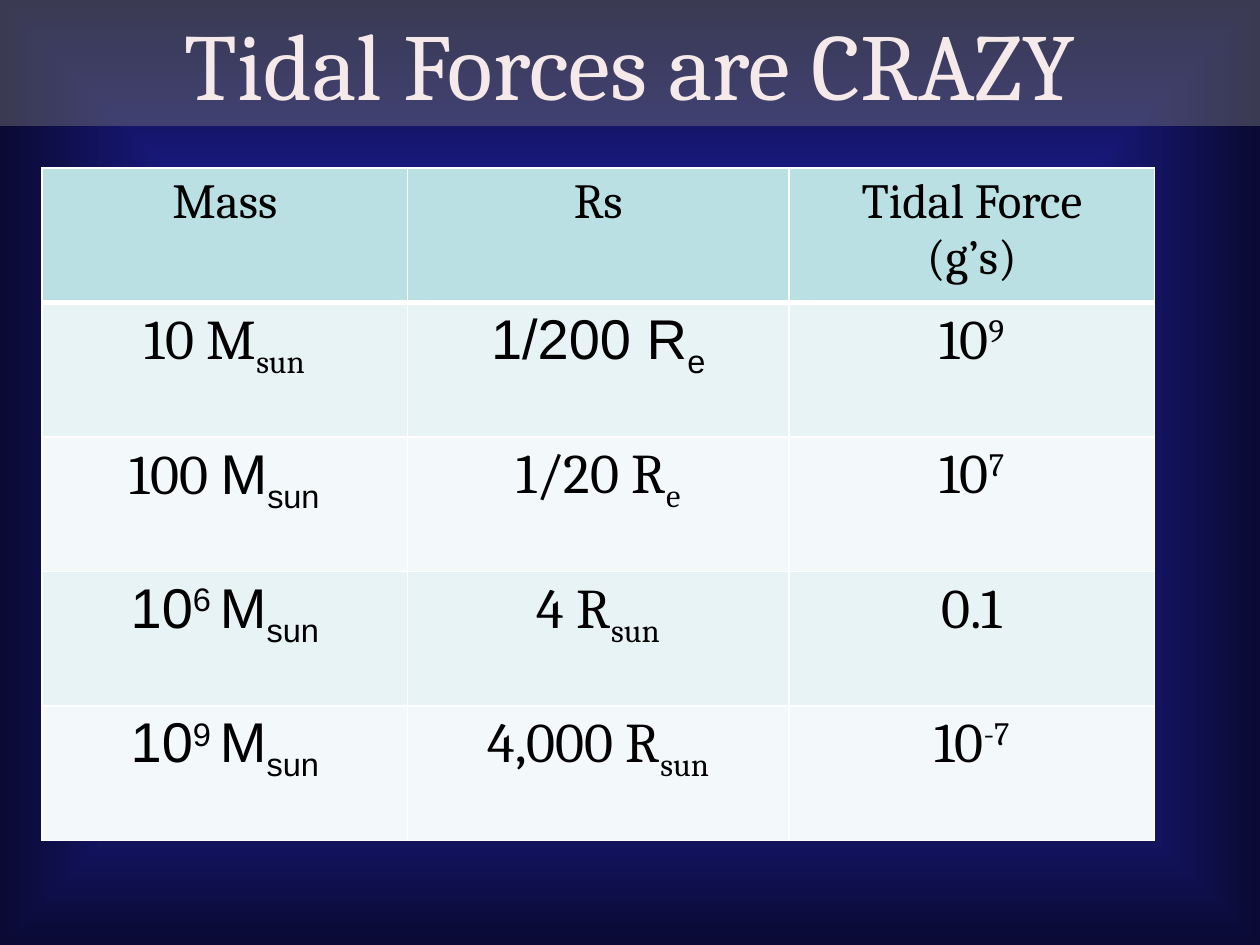
from lxml.etree import SubElement as Sub
from pptx import Presentation
from pptx.dml.color import RGBColor
from pptx.enum.shapes import MSO_SHAPE as Shape
from pptx.enum.text import MSO_ANCHOR as Anchor, PP_ALIGN as Align
from pptx.oxml.ns import qn
from pptx.util import Cm, Pt

SERIF, SANS = "Cambria", "Arial"
SUB, SUP = -25, 30
HEADER, BANDS = "BBE0E3", ("E7F3F4", "F3F9FA")
COLUMNS = (7.36, 7.7, 7.36)


def rgb(color):
    return RGBColor.from_string(color)


def add_text(p, text, font=SERIF, size=32, color="000000", base=0):
    r = p.add_run()
    r.text = text
    r.font.name, r.font.size = font, Pt(size)
    r.font.color.rgb = rgb(color)
    if base:
        r._r.get_or_add_rPr().set("baseline", str(base * 1000))
    p.alignment = Align.CENTER


def unit(symbol, index, font=SERIF):
    return [(symbol, font, 0), (index, font, SUB)]


def power(exponent, font=SERIF):
    return [("10", font, 0), (exponent, font, SUP)]


ROWS = [
    [unit("10 M", "sun"), unit("1/200 R", "e", SANS), power("9")],
    [[("100 ", SERIF, 0)] + unit("M", "sun", SANS), unit("1/20 R", "e"), power("7")],
    [power("6 ", SANS) + unit("M", "sun", SANS), unit("4 R", "sun"), [("0.1", SERIF, 0)]],
    [power("9 ", SANS) + unit("M", "sun", SANS), unit("4,000 R", "sun"), power("-7")],
]
HEADINGS = [["Mass"], ["Rs"], ["Tidal Force", "(g’s)"]]


def paint_background(s):
    fill = s.background.fill
    fill.gradient()
    for stop, color in zip(fill.gradient_stops, ("3333FF", "0A0A34")):
        stop.color.rgb = rgb(color)
    grad = s.element.find(".//" + qn("a:gradFill"))
    grad.remove(grad.find(qn("a:lin")))
    center = Sub(grad, qn("a:path"), path="shape")
    Sub(center, qn("a:fillToRect"), l="50000", t="50000", r="50000", b="50000")


def add_title(s, left, top, width, height):
    sp = s.shapes.add_shape(Shape.RECTANGLE, Cm(left), Cm(top), Cm(width), Cm(height))
    sp.shadow.inherit = False
    sp.line.fill.background()
    sp.fill.solid()
    sp.fill.fore_color.rgb = rgb("808080")
    Sub(sp.fill._xPr.find(".//" + qn("a:srgbClr")), qn("a:alpha"), val="41000")
    tf = sp.text_frame
    tf.word_wrap, tf.vertical_anchor = True, Anchor.MIDDLE
    add_text(tf.paragraphs[0], "Tidal Forces are CRAZY", size=54, color="F5E9E9")


def style_cell(cell, color, bottom=1):
    tc_pr = cell._tc.get_or_add_tcPr()
    for side, width in (("L", 1), ("R", 1), ("T", 1), ("B", bottom)):
        ln = Sub(tc_pr, qn("a:ln" + side), w=str(Pt(width)))
        Sub(Sub(ln, qn("a:solidFill")), qn("a:srgbClr"), val="FFFFFF")
    cell.fill.solid()
    cell.fill.fore_color.rgb = rgb(color)


def add_force_table(s, left, top, width, height):
    count = len(ROWS) + 1
    table = s.shapes.add_table(count, len(COLUMNS), Cm(left), Cm(top), Cm(width), Cm(height)).table
    table.first_row = table.horz_banding = False
    for column, share in zip(table.columns, COLUMNS):
        column.width = Cm(width * share / sum(COLUMNS))
    for row in table.rows:
        row.height = Cm(height / count)
    for col, lines in enumerate(HEADINGS):
        cell = table.cell(0, col)
        style_cell(cell, HEADER, bottom=3)
        tf = cell.text_frame
        for i, line in enumerate(lines):
            add_text(tf.add_paragraph() if i else tf.paragraphs[0], line, size=28)
    for i, row in enumerate(ROWS):
        for col, runs in enumerate(row):
            cell = table.cell(i + 1, col)
            style_cell(cell, BANDS[i % 2])
            for text, font, base in runs:
                add_text(cell.text_frame.paragraphs[0], text, font=font, base=base)


def main():
    prs = Presentation()
    prs.slide_width, prs.slide_height = Cm(25.4), Cm(19.05)
    s = prs.slides.add_slide(prs.slide_layouts[6])
    paint_background(s)
    add_title(s, 0, 0, 25.4, 2.54)
    add_force_table(s, 0.85, 3.39, 22.42, 13.55)
    prs.save("out.pptx")


if __name__ == "__main__":
    main()
